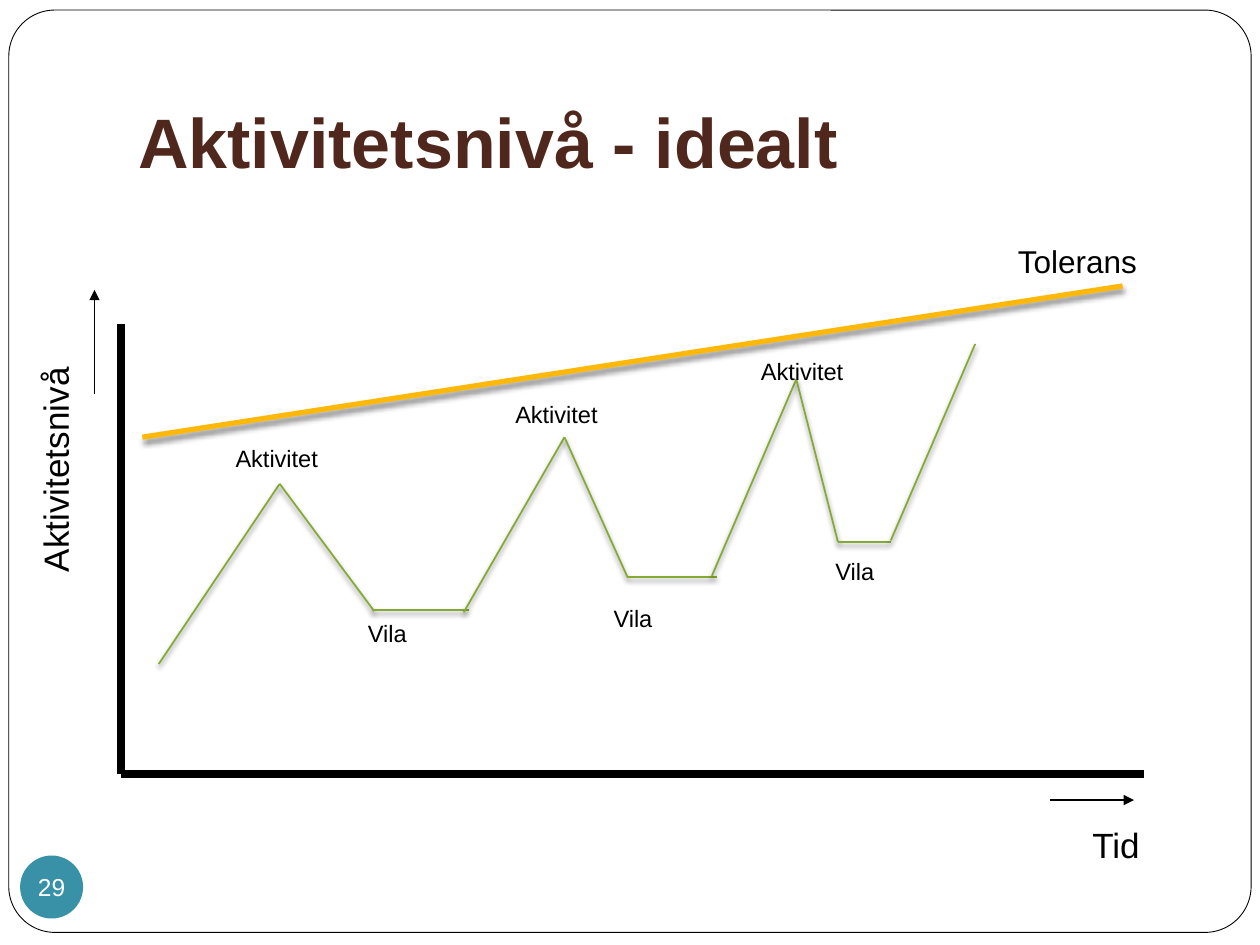
import pptx
import pptx.util
import pptx.dml.color
import pptx.enum.shapes
import pptx.enum.text
import pptx.oxml
import pptx.oxml.ns

Inches, Pt = pptx.util.Inches, pptx.util.Pt
SHAPE = pptx.enum.shapes.MSO_SHAPE
ANCHOR = pptx.enum.text.MSO_ANCHOR
ALIGN = pptx.enum.text.PP_ALIGN

THEME = {
    "font": "Arial",
    "ink": "000000", "paper": "FFFFFF", "title": "4F271C",
    "activity": "84AA33", "tolerance": "FEB80A", "badge": "3891A7",
    "title_pt": 40, "axis_pt": 20, "tolerance_pt": 18, "label_pt": 13.5, "badge_pt": 14,
}

# Content: boxes are (left, top, width, height), lines are (x1, y1, x2, y2)
TITLE = ("Aktivitetsnivå - idealt", (1, 0.3, 8.5, 1.25))
TOLERANCE_LABEL = ("Tolerans", (7.98, 1.87, 1.16, 0.4))
LEVEL_LABEL = ("Aktivitetsnivå", (0.21, 1.16, 0.54, 3.41))
TIME_LABEL = ("Tid", (8.61, 6.51, 0.6, 0.47))
PAGE = ("29", (0.16, 6.79, 0.5, 0.5))
PHASES = [  # text, box width, left and top of each label
    ("Aktivitet", 1.56, [(1.81, 3.49), (4.03, 3.14), (5.98, 2.8)]),
    ("Vila", 1.09, [(2.86, 4.88), (4.81, 4.76), (6.57, 4.39)]),
]
PHASE_HEIGHT = 0.59
ACTIVITY = [
    (1.26, 5.27, 2.22, 3.84), (2.22, 3.84, 2.97, 4.85), (2.95, 4.84, 3.72, 4.84),
    (3.68, 4.86, 4.48, 3.47), (4.48, 3.47, 4.98, 4.58), (4.98, 4.58, 5.69, 4.58),
    (5.65, 4.57, 6.32, 3.01), (6.32, 3.01, 6.65, 4.3), (6.65, 4.3, 7.07, 4.3),
    (7.07, 4.29, 7.74, 2.73),
]
TOLERANCE = (1.13, 3.47, 8.91, 2.27)
AXES = [(0.96, 2.57, 0.96, 6.14), (9.08, 6.14, 0.96, 6.14)]
ARROWS = [(0.75, 3.13, 0.75, 2.3), (8.33, 6.35, 9, 6.35)]

TIGHT = (0.06, 0.03, 0.06, 0.03)
SHADOW = (
    '<a:outerShdw %s blurRad="38100" dist="25400" dir="5400000" rotWithShape="0">'
    '<a:srgbClr val="000000"><a:alpha val="50000"/></a:srgbClr></a:outerShdw>'
    % pptx.oxml.ns.nsdecls("a")
)


def rgb(name):
    return pptx.dml.color.RGBColor.from_string(THEME[name])


def write(sp, text, size, color="ink", insets=TIGHT, anchor=ANCHOR.TOP,
          align=ALIGN.LEFT, bold=False, wrap=True):
    tf = sp.text_frame
    tf.word_wrap = wrap
    tf.vertical_anchor = anchor
    tf.margin_left, tf.margin_top, tf.margin_right, tf.margin_bottom = map(Inches, insets)
    p = tf.paragraphs[0]
    p.alignment = align
    r = p.add_run()
    r.text = text
    r.font.name = THEME["font"]
    r.font.size = Pt(THEME[size])
    r.font.bold = bold
    r.font.color.rgb = rgb(color)
    return tf


def add_text(s, text, box, size, **style):
    return write(s.shapes.add_textbox(*map(Inches, box)), text, size, **style)


def add_shape(s, kind, box, fill):
    sp = s.shapes.add_shape(kind, *map(Inches, box))
    sp.shadow.inherit = False
    sp.fill.solid()
    sp.fill.fore_color.rgb = rgb(fill)
    return sp


def add_line(s, ends, color, width, shadow=False, arrow=False):
    cx = s.shapes.add_connector(pptx.enum.shapes.MSO_CONNECTOR.STRAIGHT, *map(Inches, ends))
    cx.line.color.rgb = rgb(color)
    cx.line.width = Pt(width)
    if arrow:
        ln = cx.line._get_or_add_ln()
        ln.append(pptx.oxml.parse_xml(
            '<a:tailEnd %s type="triangle"/>' % pptx.oxml.ns.nsdecls("a")))
    effects = pptx.oxml.parse_xml("<a:effectLst %s/>" % pptx.oxml.ns.nsdecls("a"))
    if shadow:
        effects.append(pptx.oxml.parse_xml(SHADOW))
    cx._element.spPr.append(effects)


def main():
    prs = pptx.Presentation()
    prs.slide_width, prs.slide_height = Inches(10), Inches(7.5)
    s = prs.slides.add_slide(prs.slide_layouts[6])

    # Rounded frame and title
    frame = add_shape(s, SHAPE.ROUNDED_RECTANGLE, (0.07, 0.08, 9.86, 7.32), "paper")
    frame.adjustments[0] = 0.05
    frame.line.color.rgb = rgb("ink")
    frame.line.width = Pt(0.5)
    add_text(s, *TITLE, "title_pt", color="title", bold=True,
             insets=(0.1, 0.05, 0.1, 0.1), anchor=ANCHOR.BOTTOM)

    # Activity curve and tolerance line
    for ends in ACTIVITY:
        add_line(s, ends, "activity", 1, shadow=True)
    add_line(s, TOLERANCE, "tolerance", 3, shadow=True)
    add_text(s, *TOLERANCE_LABEL, "tolerance_pt", wrap=False, insets=(0.1, 0.05, 0.1, 0.05))

    # Phase labels
    for text, width, places in PHASES:
        for left, top in places:
            add_text(s, text, (left, top, width, PHASE_HEIGHT), "label_pt")

    # Axes with direction arrows and names
    for ends in AXES:
        add_line(s, ends, "ink", 4.5)
    for ends in ARROWS:
        add_line(s, ends, "ink", 0.75, arrow=True)
    add_text(s, *TIME_LABEL, "axis_pt")
    level = add_text(s, *LEVEL_LABEL, "axis_pt")
    level._txBody.bodyPr.set("vert", "vert270")

    # Page number badge
    number, box = PAGE
    badge = add_shape(s, SHAPE.OVAL, box, "badge")
    badge.line.fill.background()
    write(badge, number, "badge_pt", color="paper", insets=(0, 0, 0, 0),
          anchor=ANCHOR.MIDDLE, align=ALIGN.CENTER, wrap=False)

    prs.save("out.pptx")


if __name__ == "__main__":
    main()
